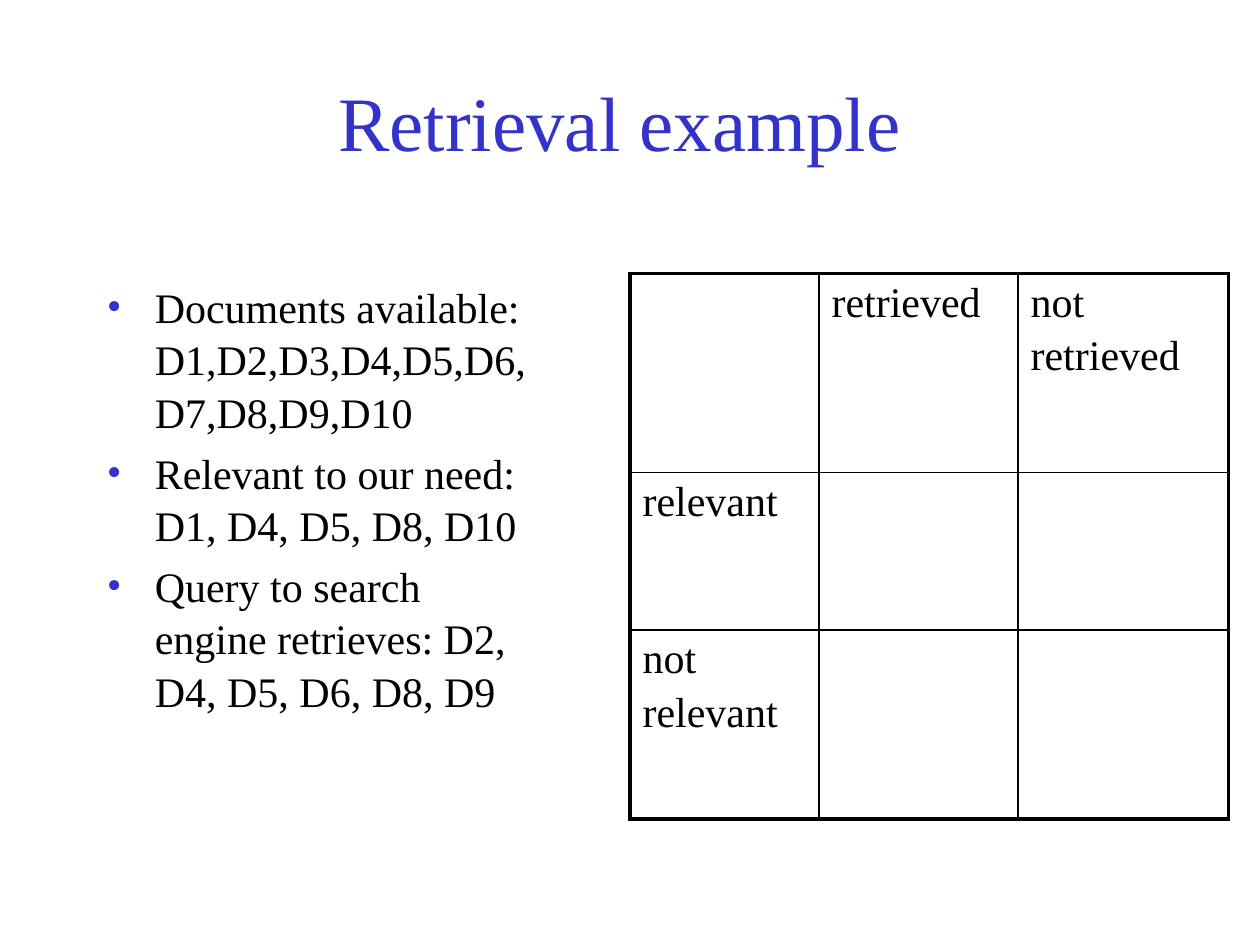
from lxml.etree import SubElement
from pptx import Presentation
from pptx.dml.color import RGBColor
from pptx.enum.text import MSO_ANCHOR, PP_ALIGN
from pptx.oxml.ns import qn
from pptx.util import Inches, Pt

FONT = "Times New Roman"
BLUE, BLACK = "3333CC", "000000"
OUTER, INNER = 2.25, 1

BULLETS = [
    "Documents available: D1,D2,D3,D4,D5,D6,D7,D8,D9,D10",
    "Relevant to our need: D1, D4, D5, D8, D10",
    "Query to search engine retrieves: D2, D4, D5, D6, D8, D9",
]
COLUMNS = [1.5, 1.58, 1.67]
ROWS = [1.58, 1.25, 1.5]
# Each cell holds a list of paragraphs
CELLS = [
    [[], ["retrieved"], ["not", "retrieved"]],
    [["relevant"], [], []],
    [["not", "relevant"], [], []],
]


def rgb(color):
    return RGBColor.from_string(color)


def add_span(para, text, size, color):
    span = para.add_run()
    span.text = text
    span.font.name = FONT
    span.font.size = Pt(size)
    span.font.color.rgb = rgb(color)


def next_para(frame, index):
    return frame.paragraphs[0] if index == 0 else frame.add_paragraph()


def add_text_box(page, left, top, width, height):
    box = page.shapes.add_textbox(
        Inches(left), Inches(top), Inches(width), Inches(height))
    box.text_frame.word_wrap = True
    return box.text_frame


def add_title(page, text):
    frame = add_text_box(page, 0.67, 0.33, 8.5, 1.25)
    frame.vertical_anchor = MSO_ANCHOR.MIDDLE
    para = frame.paragraphs[0]
    para.alignment = PP_ALIGN.CENTER
    add_span(para, text, 44, BLUE)


def set_bullet(para, color):
    props = para._p.get_or_add_pPr()
    props.set("marL", str(Inches(0.38)))
    props.set("indent", str(-Inches(0.38)))
    bullet_color = SubElement(props, qn("a:buClr"))
    SubElement(bullet_color, qn("a:srgbClr"), val=color)
    SubElement(props, qn("a:buFont"), typeface=FONT)
    SubElement(props, qn("a:buChar"), char="•")


def add_bullets(page, items):
    frame = add_text_box(page, 0.75, 2.17, 3.58, 4.5)
    for index, item in enumerate(items):
        para = next_para(frame, index)
        para.line_spacing = 1.04
        para.space_before = Pt(4.8)
        set_bullet(para, BLUE)
        add_span(para, item, 24, BLACK)


def set_borders(cell, widths):
    props = cell._tc.get_or_add_tcPr()
    for position, (side, width) in enumerate(widths.items()):
        line = props.makeelement(qn(f"a:{side}"), {"w": str(Pt(width))})
        fill = SubElement(line, qn("a:solidFill"))
        SubElement(fill, qn("a:srgbClr"), val=BLACK)
        props.insert(position, line)


def add_matrix(page):
    table = page.shapes.add_table(
        len(ROWS), len(COLUMNS), Inches(5), Inches(2.17),
        Inches(sum(COLUMNS)), Inches(sum(ROWS))).table
    table.first_row = table.horz_banding = False
    for column, width in zip(table.columns, COLUMNS):
        column.width = Inches(width)
    for row, height in zip(table.rows, ROWS):
        row.height = Inches(height)

    last_row, last_column = len(ROWS) - 1, len(COLUMNS) - 1
    for r, texts in enumerate(CELLS):
        for c, lines in enumerate(texts):
            cell = table.cell(r, c)
            cell.fill.background()
            for index, text in enumerate(lines):
                para = next_para(cell.text_frame, index)
                para.space_before = Pt(4)
                add_span(para, text, 24, BLACK)
            # Thick frame around the table, thin lines inside
            set_borders(cell, {
                "lnL": OUTER if c == 0 else INNER,
                "lnR": OUTER if c == last_column else INNER,
                "lnT": OUTER if r == 0 else INNER,
                "lnB": OUTER if r == last_row else INNER,
            })


def main():
    deck = Presentation()
    deck.slide_width, deck.slide_height = Inches(10), Inches(7.5)
    page = deck.slides.add_slide(deck.slide_layouts[6])
    add_title(page, "Retrieval example")
    add_bullets(page, BULLETS)
    add_matrix(page)
    deck.save("out.pptx")


if __name__ == "__main__":
    main()
